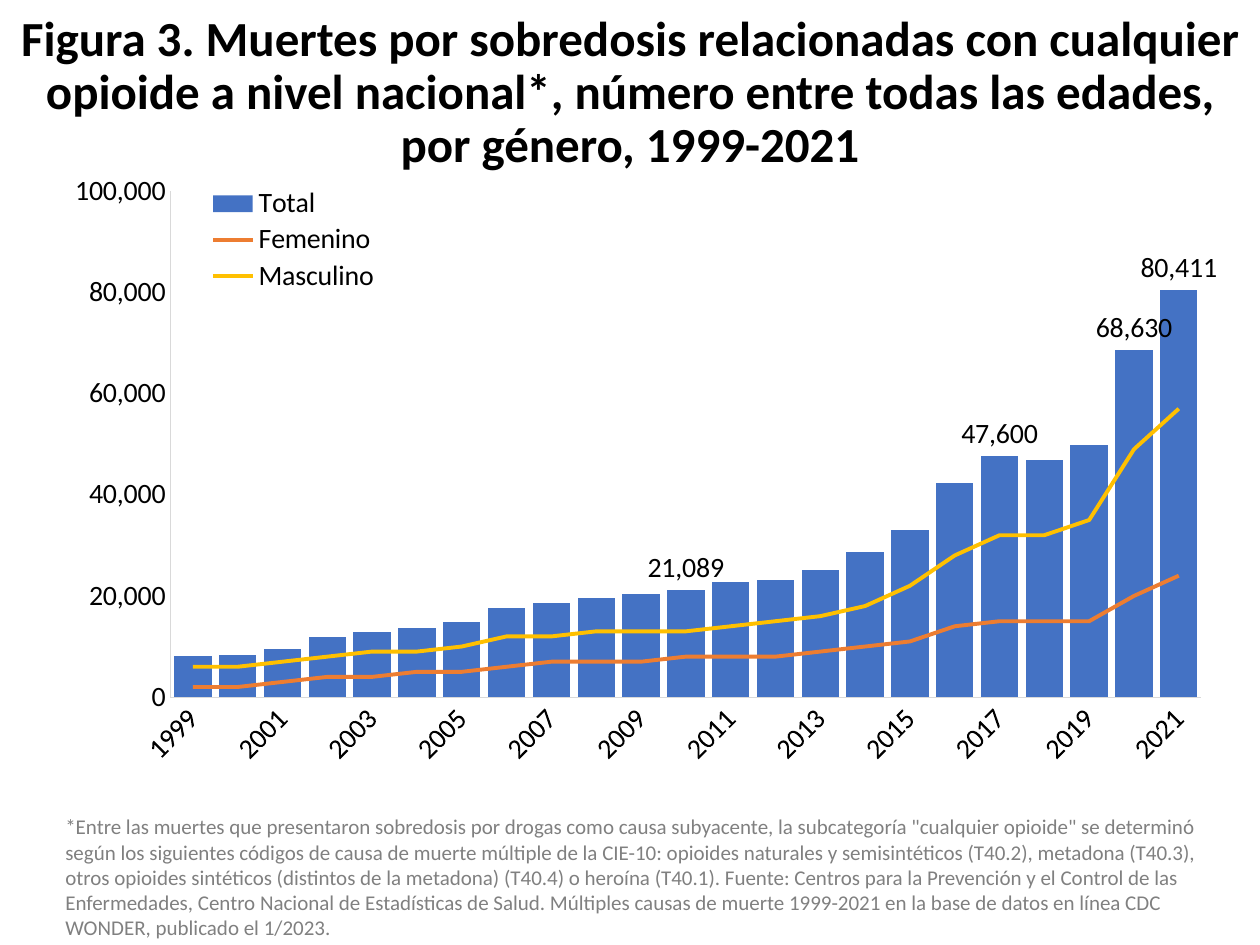
from dataclasses import dataclass

from pptx import Presentation
from pptx.chart.data import CategoryChartData
from pptx.dml.color import RGBColor
from pptx.enum.chart import (
    XL_CHART_TYPE, XL_LABEL_POSITION, XL_LEGEND_POSITION, XL_MARKER_STYLE,
    XL_TICK_MARK,
)
from pptx.enum.text import MSO_ANCHOR, PP_ALIGN
from pptx.oxml import parse_xml
from pptx.oxml.ns import nsdecls
from pptx.util import Inches, Pt

COLUMNS = XL_CHART_TYPE.COLUMN_CLUSTERED
OUTSIDE_END = XL_LABEL_POSITION.OUTSIDE_END
LEGEND_BOTTOM = XL_LEGEND_POSITION.BOTTOM
NO_MARKER = XL_MARKER_STYLE.NONE
NO_TICK = XL_TICK_MARK.NONE
TOP, MIDDLE = MSO_ANCHOR.TOP, MSO_ANCHOR.MIDDLE
LEFT, CENTER = PP_ALIGN.LEFT, PP_ALIGN.CENTER


@dataclass(frozen=True)
class Theme:
    font: str = "Calibri"
    ink: str = "000000"
    note: str = "808080"
    axis: str = "D9D9D9"
    total: str = "4472C4"
    women: str = "ED7D31"
    men: str = "FFC000"
    title_size: int = 28
    chart_size: int = 16
    note_size: int = 12


THEME = Theme()

TITLE = ("Figura 3. Muertes por sobredosis relacionadas con cualquier opioide "
         "a nivel nacional*, número entre todas las edades, por género, 1999-2021")
NOTE = ("*Entre las muertes que presentaron sobredosis por drogas como causa "
        "subyacente, la subcategoría \"cualquier opioide\" se determinó según los "
        "siguientes códigos de causa de muerte múltiple de la CIE-10: opioides "
        "naturales y semisintéticos (T40.2), metadona (T40.3), otros opioides "
        "sintéticos (distintos de la metadona) (T40.4) o heroína (T40.1). Fuente: "
        "Centros para la Prevención y el Control de las Enfermedades, Centro "
        "Nacional de Estadísticas de Salud. Múltiples causas de muerte 1999-2021 "
        "en la base de datos en línea CDC WONDER, publicado el 1/2023.")

YEARS = range(1999, 2022)
LABELLED_YEARS = (2010, 2017, 2020, 2021)
TOTAL = (8050, 8407, 9496, 11920, 12940, 13756, 14918, 17545, 18516, 19582,
         20422, 21089, 22784, 23166, 25052, 28647, 33091, 42249, 47600, 46802,
         49860, 68630, 80411)
WOMEN_THOUSANDS = (2, 2, 3, 4, 4, 5, 5, 6, 7, 7, 7, 8, 8, 8, 9, 10, 11, 14,
                   15, 15, 15, 20, 24)
MEN_THOUSANDS = (6, 6, 7, 8, 9, 9, 10, 12, 12, 13, 13, 13, 14, 15, 16, 18, 22,
                 28, 32, 32, 35, 49, 57)
DEATHS = {
    "Total": TOTAL,
    "Femenino": [1000 * value for value in WOMEN_THOUSANDS],
    "Masculino": [1000 * value for value in MEN_THOUSANDS],
}


def style_font(font, size, color, bold=False):
    font.name = THEME.font
    font.size = Pt(size)
    font.bold = bold
    font.color.rgb = RGBColor.from_string(color)


def add_text(page, box, text, size, color, bold=False, align=LEFT,
             anchor=TOP, spacing=1.0):
    frame = page.shapes.add_textbox(*map(Inches, box)).text_frame
    frame.word_wrap = True
    frame.vertical_anchor = anchor
    frame.text = text
    para = frame.paragraphs[0]
    para.alignment = align
    para.line_spacing = spacing
    style_font(para.runs[0].font, size, color, bold)


def manual_layout(left, top, width, height, target=""):
    """Return a layout given in shares of the chart's size."""
    return parse_xml(
        f'<c:layout {nsdecls("c")}><c:manualLayout>{target}'
        '<c:xMode val="edge"/><c:yMode val="edge"/>'
        f'<c:x val="{left}"/><c:y val="{top}"/>'
        f'<c:w val="{width}"/><c:h val="{height}"/>'
        '</c:manualLayout></c:layout>')


def move_to_lines(chart):
    """Move every series but the first from columns to a line plot."""
    bars = chart.element.xpath(".//c:barChart")[0]
    axes = "".join(f'<c:axId val="{axis.get("val")}"/>'
                   for axis in bars.xpath("c:axId"))
    lines = parse_xml(f'<c:lineChart {nsdecls("c")}><c:grouping val="standard"/>'
                      f'<c:varyColors val="0"/>{axes}</c:lineChart>')
    for series in bars.xpath("c:ser")[1:]:
        for flag in series.xpath("c:invertIfNegative"):
            series.remove(flag)
        lines.xpath("c:axId")[0].addprevious(series)
    bars.addnext(lines)


def style_axes(chart):
    for axis in (chart.category_axis, chart.value_axis):
        axis.major_tick_mark = axis.minor_tick_mark = NO_TICK
        axis.has_major_gridlines = False
        style_font(axis.tick_labels.font, THEME.chart_size, THEME.ink)
        axis.format.line.color.rgb = RGBColor.from_string(THEME.axis)
        axis.format.line.width = Pt(0.75)
    values = chart.value_axis
    values.minimum_scale, values.maximum_scale = 0, 100000
    values.major_unit = 20000
    values.tick_labels.number_format = "#,##0"
    values.tick_labels.number_format_is_linked = False
    years = chart.element.xpath(".//c:catAx")[0]
    years.xpath("c:txPr/a:bodyPr")[0].set("rot", "-2700000")
    years.xpath("c:noMultiLvlLbl")[0].addprevious(
        parse_xml(f'<c:tickLblSkip {nsdecls("c")} val="2"/>'))


def style_series(chart):
    columns, lines = chart.plots
    columns.gap_width, columns.overlap = 20, -2
    columns.vary_by_categories = False
    total = columns.series[0]
    total.format.fill.solid()
    total.format.fill.fore_color.rgb = RGBColor.from_string(THEME.total)
    total.data_labels.show_value = False
    for year in LABELLED_YEARS:
        label = total.points[year - YEARS[0]].data_label
        label.position = OUTSIDE_END
        style_font(label.font, THEME.chart_size, THEME.ink)
    for series, color in zip(lines.series, (THEME.women, THEME.men)):
        series.smooth = False
        series.marker.style = NO_MARKER
        series.format.line.color.rgb = RGBColor.from_string(color)
        series.format.line.width = Pt(2.25)


def place_plot_and_legend(chart):
    chart.has_legend = True
    chart.legend.position = LEGEND_BOTTOM
    chart.legend.include_in_layout = False
    style_font(chart.legend.font, THEME.chart_size, THEME.ink)
    for layout in chart.element.xpath(".//c:layout"):
        layout.getparent().remove(layout)
    chart.element.xpath(".//c:plotArea")[0].insert(0, manual_layout(
        0.11, 0.05, 0.88, 0.78, '<c:layoutTarget val="inner"/>'))
    chart.element.xpath(".//c:legendPos")[0].addnext(
        manual_layout(0.13, 0.04, 0.17, 0.17))


def add_deaths_chart(page, box):
    data = CategoryChartData(number_format="#,##0")
    data.categories = [str(year) for year in YEARS]
    for name, values in DEATHS.items():
        data.add_series(name, values)
    chart = page.shapes.add_chart(COLUMNS, *map(Inches, box), data).chart
    chart.has_title = False
    style_font(chart.font, THEME.chart_size, THEME.ink)
    move_to_lines(chart)
    style_axes(chart)
    style_series(chart)
    place_plot_and_legend(chart)


def main():
    deck = Presentation()
    deck.slide_width, deck.slide_height = Inches(10), Inches(7.5)
    page = deck.slides.add_slide(deck.slide_layouts[6])
    add_text(page, (0, 0.02, 10, 1.45), TITLE, THEME.title_size, THEME.ink,
             bold=True, align=CENTER, anchor=MIDDLE, spacing=0.9)
    add_deaths_chart(page, (0.33, 1.26, 9.33, 5.15))
    add_text(page, (0.42, 6.41, 9.33, 1.31), NOTE, THEME.note_size, THEME.note)
    deck.save("out.pptx")


if __name__ == "__main__":
    main()
